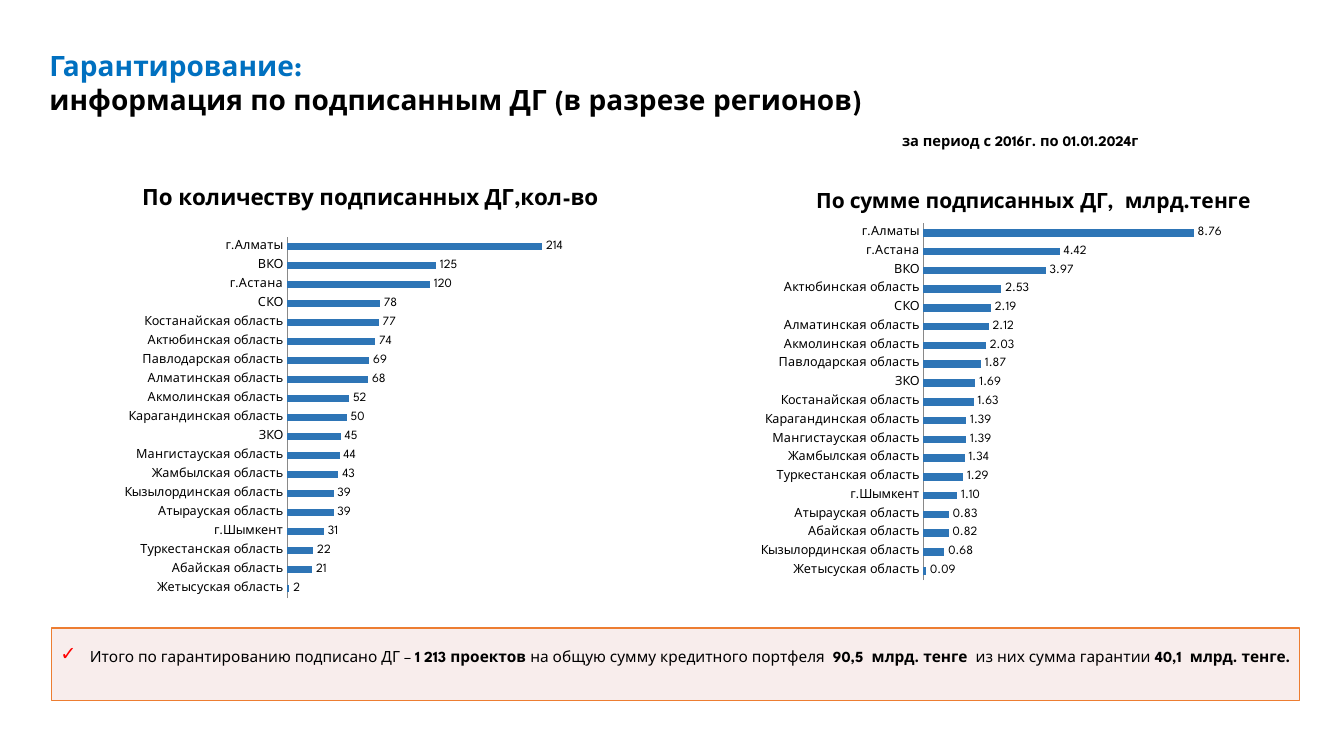
from lxml.etree import SubElement
from pptx import Presentation
from pptx.chart.data import CategoryChartData
from pptx.dml.color import RGBColor
from pptx.enum.chart import XL_CHART_TYPE as ChartType
from pptx.enum.chart import XL_LABEL_POSITION as LabelPosition
from pptx.enum.chart import XL_TICK_LABEL_POSITION as TickLabels
from pptx.enum.chart import XL_TICK_MARK as TickMark
from pptx.enum.shapes import MSO_SHAPE as Preset
from pptx.enum.text import MSO_ANCHOR as Anchor
from pptx.enum.text import MSO_AUTO_SIZE as AutoSize
from pptx.enum.text import PP_ALIGN as Align
from pptx.oxml import parse_xml
from pptx.oxml.ns import nsdecls, qn
from pptx.util import Inches, Pt

WIDTH, HEIGHT = Inches(13.33), Inches(7.5)
HEADING_FONT, CHART_FONT = "League Spartan", "Calibri"
BLACK = RGBColor(0x00, 0x00, 0x00)
BLUE = RGBColor(0x00, 0x70, 0xC0)
RED = RGBColor(0xFF, 0x00, 0x00)
BAR_BLUE = RGBColor(0x2E, 0x75, 0xB6)
AXIS_GRAY = RGBColor(0x89, 0x89, 0x89)
PINK = RGBColor(0xF2, 0xDC, 0xDB)
ORANGE = RGBColor(0xED, 0x7D, 0x31)

# Regions from the highest value to the lowest
COUNTS = {
    "г.Алматы": 214, "ВКО": 125, "г.Астана": 120, "СКО": 78,
    "Костанайская область": 77, "Актюбинская область": 74,
    "Павлодарская область": 69, "Алматинская область": 68,
    "Акмолинская область": 52, "Карагандинская область": 50, "ЗКО": 45,
    "Мангистауская область": 44, "Жамбылская область": 43,
    "Кызылординская область": 39, "Атырауская область": 39, "г.Шымкент": 31,
    "Туркестанская область": 22, "Абайская область": 21,
    "Жетысуская область": 2,
}
SUMS = {
    "г.Алматы": 8.76, "г.Астана": 4.42, "ВКО": 3.97,
    "Актюбинская область": 2.53, "СКО": 2.19, "Алматинская область": 2.12,
    "Акмолинская область": 2.03, "Павлодарская область": 1.87, "ЗКО": 1.69,
    "Костанайская область": 1.63, "Карагандинская область": 1.39,
    "Мангистауская область": 1.39, "Жамбылская область": 1.34,
    "Туркестанская область": 1.29, "г.Шымкент": 1.10,
    "Атырауская область": 0.83, "Абайская область": 0.82,
    "Кызылординская область": 0.68, "Жетысуская область": 0.09,
}


def area(left, top, width, height):
    """Turn percentages of the slide into lengths."""
    return (int(WIDTH * left / 100), int(HEIGHT * top / 100),
            int(WIDTH * width / 100), int(HEIGHT * height / 100))


def set_values(target, **values):
    for name, value in values.items():
        setattr(target, name, value)


def set_font(font, size, bold=False, color=BLACK, name=HEADING_FONT):
    set_values(font, size=Pt(size), bold=bold, name=name)
    font.color.rgb = color


def add_span(para, text, size, bold=False, color=BLACK):
    span = para.add_run()
    span.text = text
    set_font(span.font, size, bold, color)


def add_heading(page, first_line, second_line):
    title = page.shapes.title
    left, top, width, height = area(2.93, 5.73, 64.37, 10.27)
    set_values(title, left=left, top=top, width=width, height=height)
    set_values(title.text_frame, word_wrap=True, auto_size=AutoSize.NONE,
               vertical_anchor=Anchor.TOP)
    para = title.text_frame.paragraphs[0]
    set_values(para, alignment=Align.LEFT, line_spacing=1.0, space_before=Pt(0))
    add_span(para, first_line, 20, True, BLUE)
    para.add_line_break()
    add_span(para, second_line, 20, True)


def add_period(page, text):
    box = page.shapes.add_textbox(*area(66.39, 16.8, 19.8, 3.73))
    box.text_frame.word_wrap = False
    add_span(box.text_frame.paragraphs[0], text, 10.5, True)


def add_check_bullet(para):
    props = para._p.get_or_add_pPr()
    props.set("marL", str(Inches(0.3)))
    props.set("indent", str(-Inches(0.29)))
    color = SubElement(props, qn("a:buClr"))
    SubElement(color, qn("a:srgbClr"), val=str(RED))
    SubElement(props, qn("a:buSzPct"), val="125000")
    SubElement(props, qn("a:buFont"), typeface=HEADING_FONT)
    SubElement(props, qn("a:buChar"), char="✓")


def add_summary(page, parts):
    box = page.shapes.add_shape(Preset.RECTANGLE, *area(3.83, 83.07, 92.87, 9.6))
    box.shadow.inherit = False
    box.fill.solid()
    box.fill.fore_color.rgb = PINK
    fill_color = box.fill._xPr.find(qn("a:solidFill"))[0]
    SubElement(fill_color, qn("a:alpha"), val="50000")
    box.line.color.rgb = ORANGE
    box.line.width = Pt(1)
    # The deeper bottom margin lifts the line above the middle
    set_values(box.text_frame, word_wrap=True, vertical_anchor=Anchor.MIDDLE,
               margin_left=Inches(0.08), margin_right=Inches(0.08),
               margin_top=Inches(0.04), margin_bottom=Inches(0.2))
    para = box.text_frame.paragraphs[0]
    add_check_bullet(para)
    set_values(para, alignment=Align.LEFT, space_after=Pt(6))
    # Plain and bold wording alternate
    for index, text in enumerate(parts):
        add_span(para, text, 11, index % 2 == 1)


def make_layout(**shares):
    """Fix a chart part at shares of the chart's size."""
    layout = parse_xml(f"<c:layout {nsdecls('c')}><c:manualLayout/></c:layout>")
    manual = layout[0]
    if "w" in shares:
        SubElement(manual, qn("c:layoutTarget"), val="inner")
    for side in "xy":
        SubElement(manual, qn(f"c:{side}Mode"), val="edge")
    for name, share in shares.items():
        SubElement(manual, qn(f"c:{name}"), val=str(share))
    return layout


def place_plot(chart, **shares):
    plot_area = chart._chartSpace.chart.plotArea
    for old in plot_area.findall(qn("c:layout")):
        plot_area.remove(old)
    plot_area.insert(0, make_layout(**shares))


def place_title(chart, **shares):
    title = chart.chart_title._element
    for old in title.findall(qn("c:layout")):
        title.remove(old)
    title.find(qn("c:tx")).addnext(make_layout(**shares))


def add_region_chart(page, place, heading, size, regions, number_format, limit):
    data = CategoryChartData(number_format=number_format)
    data.categories = list(reversed(regions))
    data.add_series(heading, list(reversed(regions.values())))
    chart = page.shapes.add_chart(ChartType.BAR_CLUSTERED, *place, data).chart
    set_font(chart.font, 9, name=CHART_FONT)
    chart.has_legend = False

    # Heading
    chart.has_title = True
    add_span(chart.chart_title.text_frame.paragraphs[0], heading, size, True)
    chart.chart_title.include_in_layout = False

    # Axes
    regions_axis, values_axis = chart.category_axis, chart.value_axis
    set_values(regions_axis, major_tick_mark=TickMark.NONE,
               minor_tick_mark=TickMark.NONE, has_major_gridlines=False,
               tick_label_position=TickLabels.NEXT_TO_AXIS)
    set_font(regions_axis.tick_labels.font, 9)
    regions_axis.format.line.color.rgb = AXIS_GRAY
    set_values(values_axis, visible=False, has_major_gridlines=False,
               major_tick_mark=TickMark.NONE, minor_tick_mark=TickMark.NONE,
               minimum_scale=0, maximum_scale=limit)

    # Bars and their values
    plot = chart.plots[0]
    set_values(plot, gap_width=150, vary_by_categories=False,
               has_data_labels=True)
    set_values(plot.data_labels, show_value=True, number_format=number_format,
               number_format_is_linked=False, position=LabelPosition.OUTSIDE_END)
    set_font(plot.data_labels.font, 9)
    fill = plot.series[0].format.fill
    fill.solid()
    fill.fore_color.rgb = BAR_BLUE
    return chart


def main():
    deck = Presentation()
    set_values(deck, slide_width=WIDTH, slide_height=HEIGHT)
    page = deck.slides.add_slide(deck.slide_layouts[5])
    add_heading(page, "Гарантирование: ",
                "информация по подписанным ДГ (в разрезе регионов)")
    add_period(page, "за период с 2016г. по 01.01.2024г")
    add_summary(page, [
        "Итого по гарантированию подписано ДГ – ", "1 213 проектов ",
        "на общую сумму кредитного портфеля  ", "90,5  млрд. тенге  ",
        "из них сумма гарантии", " 40,1  млрд. тенге."])

    counts = add_region_chart(page, area(5.4, 22.4, 44.34, 59.73),
                              "По количеству подписанных ДГ,кол-во ", 16,
                              COUNTS, "General", 250)
    place_title(counts, x=0.11, y=0.03)
    place_plot(counts, x=0.36, y=0.15, w=0.5, h=0.8)

    sums = add_region_chart(page, area(50.34, 22.4, 45.91, 59.73),
                            "По сумме подписанных ДГ,  млрд.тенге", 15,
                            SUMS, "#,##0.00", 10)
    place_title(sums, x=0.22, y=0.04)
    place_plot(sums, x=0.4, y=0.12, w=0.5, h=0.79)
    deck.save("out.pptx")


if __name__ == "__main__":
    main()
